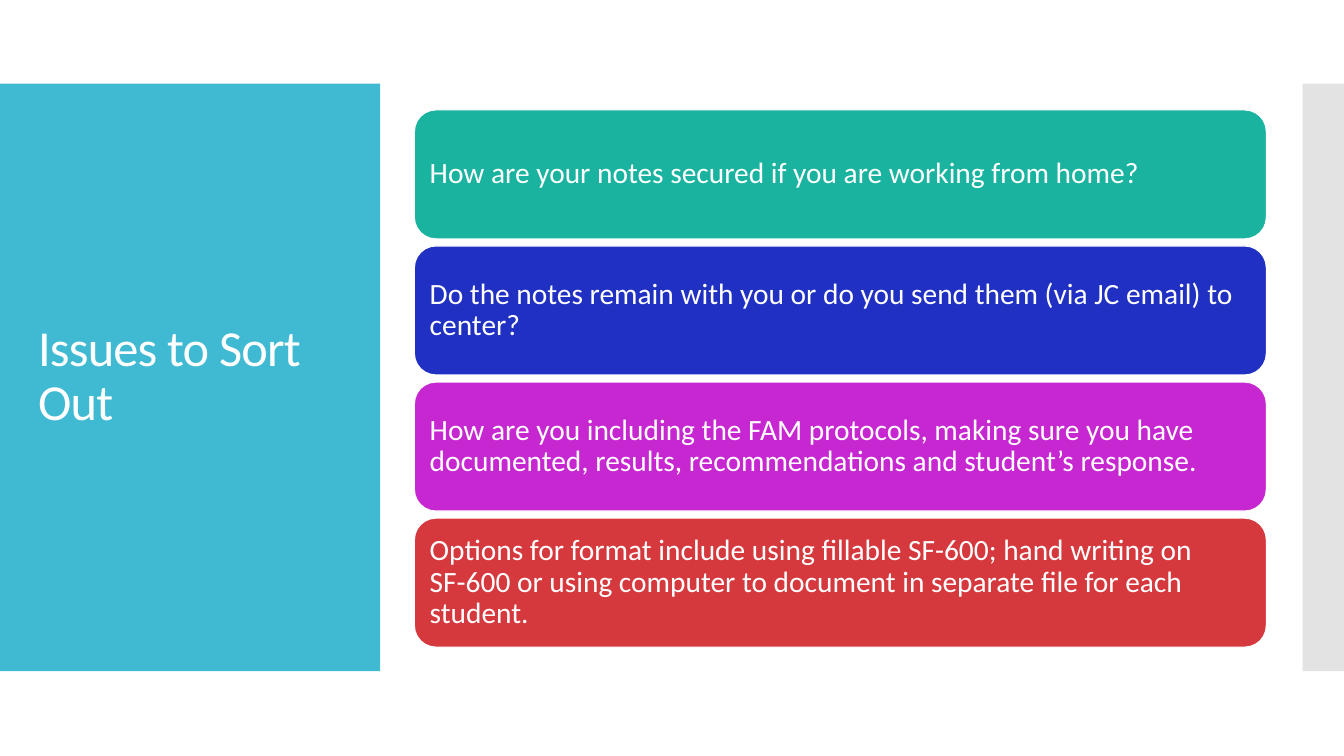
from lxml.etree import SubElement
from pptx import Presentation
from pptx.dml.color import RGBColor
from pptx.enum.shapes import MSO_SHAPE
from pptx.enum.text import MSO_ANCHOR, PP_ALIGN
from pptx.oxml.ns import qn
from pptx.util import Inches, Pt

COLORS = {
    "white": "FFFFFF",
    "title panel": "40BAD2",
    "edge": "C8C8C8",
    "teal": "1AB39F",
    "blue": "2030C2",
    "magenta": "C727D1",
    "red": "D5393D",
}
FONT = "Calibri"
BAND_TOP, BAND_HEIGHT = 0.83, 5.83
CARD_LEFT, CARD_TOP, CARD_WIDTH, CARD_HEIGHT = 4.11, 1.09, 8.45, 1.28
CARD_STEP = 1.35
ISSUES = [
    ("teal", "How are your notes secured if you are working from home?"),
    ("blue", "Do the notes remain with you or do you send them (via JC email) to center?"),
    ("magenta", "How are you including the FAM protocols, making sure you have documented, "
                "results, recommendations and student’s response."),
    ("red", "Options for format include using fillable SF-600; hand writing on SF-600 or "
            "using computer to document in separate file for each student."),
]


def rgb(name):
    return RGBColor.from_string(COLORS[name])


def add_filled(page, kind, left, top, width, height, color):
    shape = page.shapes.add_shape(
        kind, Inches(left), Inches(top), Inches(width), Inches(height))
    shape.shadow.inherit = False
    shape.fill.solid()
    shape.fill.fore_color.rgb = rgb(color)
    shape.line.fill.background()
    return shape


def set_opacity(shape, percent):
    color = shape.fill._xPr.find(qn("a:solidFill"))[0]
    SubElement(color, qn("a:alpha"), val=str(percent * 1000))


def write(shape, text, size):
    """Fill the shape with one white, left-aligned, vertically centred paragraph."""
    frame = shape.text_frame
    frame.word_wrap = True
    frame.vertical_anchor = MSO_ANCHOR.MIDDLE
    para = frame.paragraphs[0]
    para.text = text
    para.alignment = PP_ALIGN.LEFT
    para.line_spacing = 0.9
    para.font.name = FONT
    para.font.size = Pt(size)
    para.font.color.rgb = rgb("white")
    return para


def add_title(page, text):
    box = page.shapes.add_textbox(Inches(0.28), Inches(1.23), Inches(3.22), Inches(5.03))
    para = write(box, text, 36)
    para.runs[0].font._element.set("spc", "-60")


def add_card(page, top, color, text):
    card = add_filled(page, MSO_SHAPE.ROUNDED_RECTANGLE,
                      CARD_LEFT, top, CARD_WIDTH, CARD_HEIGHT, color)
    card.line.color.rgb = rgb("white")
    card.line.width = Pt(0.85)
    frame = card.text_frame
    frame.margin_left = frame.margin_right = Inches(0.09)
    frame.margin_top = frame.margin_bottom = Inches(0.09)
    write(card, text, 21)


def main():
    deck = Presentation()
    deck.slide_width, deck.slide_height = Inches(13.33), Inches(7.5)
    page = deck.slides.add_slide(deck.slide_layouts[6])

    add_filled(page, MSO_SHAPE.RECTANGLE, 0, BAND_TOP, 3.77, BAND_HEIGHT, "title panel")
    edge = add_filled(page, MSO_SHAPE.RECTANGLE, 12.92, BAND_TOP, 0.41, BAND_HEIGHT, "edge")
    set_opacity(edge, 50)
    add_title(page, "Issues to Sort Out")
    for index, (color, text) in enumerate(ISSUES):
        add_card(page, CARD_TOP + index * CARD_STEP, color, text)

    deck.save("out.pptx")


if __name__ == "__main__":
    main()
